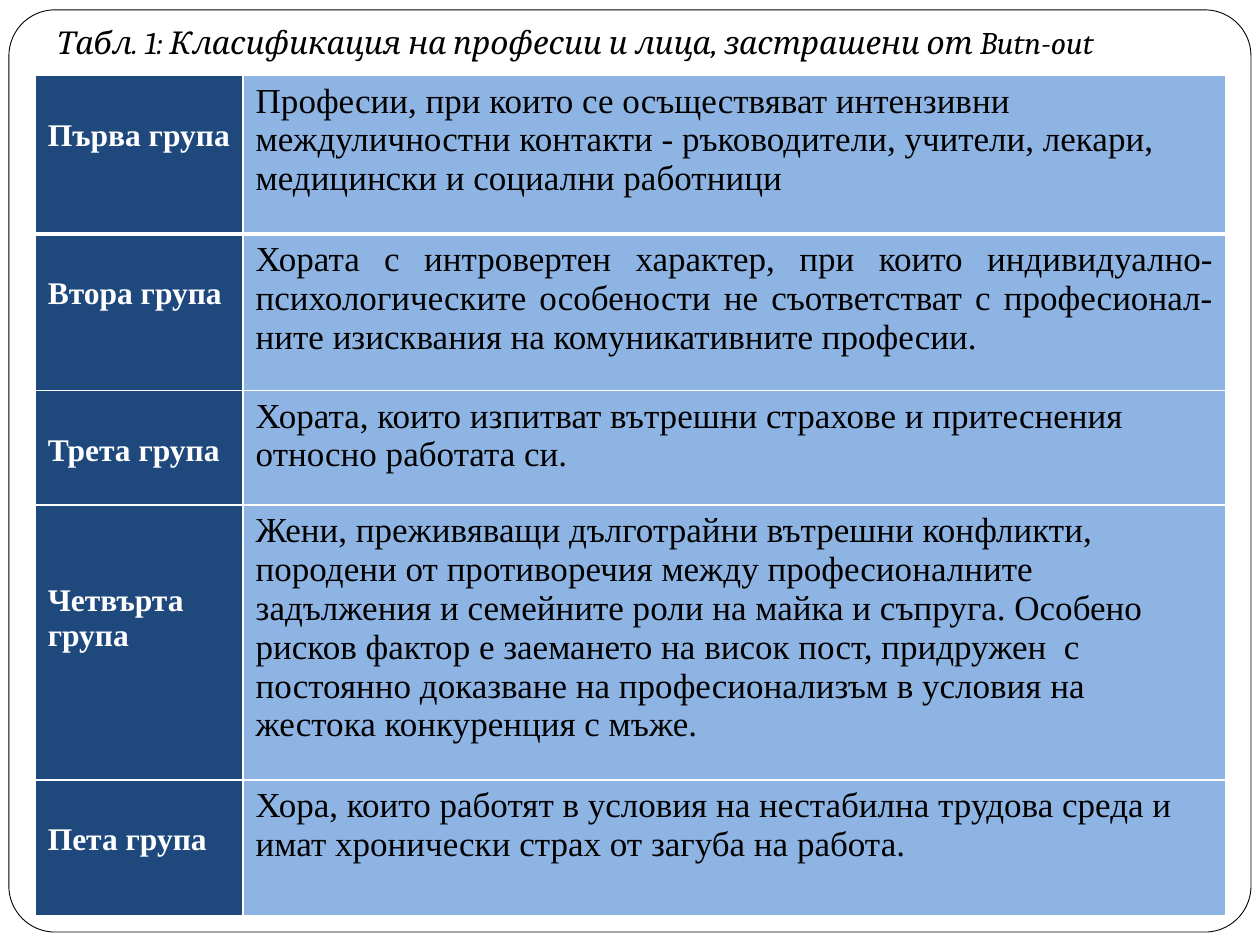
from pptx import Presentation
from pptx.dml.color import RGBColor
from pptx.enum.shapes import MSO_SHAPE
from pptx.enum.text import MSO_ANCHOR, PP_ALIGN
from pptx.oxml import parse_xml
from pptx.oxml.ns import nsdecls
from pptx.util import Cm, Pt

COLORS = {"white": "FFFFFF", "black": "000000", "label": "1F497D", "body": "8EB4E3"}
TITLE = "Табл. 1: Класификация на професии и лица, застрашени от Butn-out"
LEFT, JUSTIFY = PP_ALIGN.LEFT, PP_ALIGN.JUSTIFY
GROUPS = [
    # label, description, alignment, row height, label lines to skip
    ("Първа група", "Професии, при които се осъществяват интензивни междуличностни контакти - "
     "ръководители, учители, лекари, медицински и социални работници", LEFT, 3.2, 1),
    ("Втора група", "Хората с интровертен характер, при които индивидуално-психологическите "
     "особености не съответстват с професионал-ните изисквания на комуникативните професии.",
     JUSTIFY, 3.15, 1),
    ("Трета група", "Хората, които изпитват вътрешни страхове и притеснения относно работата си.",
     LEFT, 2.31, 1),
    ("Четвърта група", "Жени, преживяващи дълготрайни вътрешни конфликти, породени от противоречия "
     "между професионалните задължения и семейните роли на майка и съпруга. Особено рисков фактор "
     "е заемането на висок пост, придружен  с  постоянно доказване на професионализъм в условия "
     "на жестока конкуренция с мъже.", LEFT, 5.54, 2),
    ("Пета група", "Хора, които работят в условия на нестабилна трудова среда и имат хронически "
     "страх от загуба на работа.", LEFT, 2.74, 1),
]
COLUMN_WIDTHS = [4.19, 19.81]
CELL_MARGIN, LABEL_LINE = 0.13, 0.73


def color(name):
    return RGBColor.from_string(COLORS[name])


def set_font(paragraph, name, size, color_name, bold=False, italic=False):
    font = paragraph.font
    font.name, font.size, font.bold, font.italic = name, Pt(size), bold, italic
    font.color.rgb = color(color_name)


def set_borders(cell, bottom_width):
    properties = cell._tc.get_or_add_tcPr()
    for side, width in (("L", 1), ("R", 1), ("T", 1), ("B", bottom_width)):
        properties.append(parse_xml(
            f'<a:ln{side} {nsdecls("a")} w="{Pt(width)}"><a:solidFill>'
            f'<a:srgbClr val="{COLORS["white"]}"/></a:solidFill></a:ln{side}>'))


def fill_cell(cell, text, fill, bottom_width, top_margin, alignment, **font):
    set_borders(cell, bottom_width)
    cell.fill.solid()
    cell.fill.fore_color.rgb = color(fill)
    cell.margin_top = Cm(top_margin)
    cell.text = text
    paragraph = cell.text_frame.paragraphs[0]
    paragraph.alignment = alignment
    set_font(paragraph, "Times New Roman", **font)


def add_frame(slide):
    frame = slide.shapes.add_shape(
        MSO_SHAPE.ROUNDED_RECTANGLE, Cm(0.18), Cm(0.2), Cm(25.04), Cm(18.59))
    frame.adjustments[0] = 0.05
    frame.shadow.inherit = False
    frame.fill.solid()
    frame.fill.fore_color.rgb = color("white")
    frame.line.color.rgb = color("black")
    frame.line.width = Pt(0.5)
    frame.element.getparent().insert(2, frame.element)


def add_title(slide):
    title = slide.shapes.title
    title.left, title.top, title.width, title.height = Cm(0.89), Cm(0.33), Cm(22.81), Cm(1.02)
    title.text = TITLE
    title.text_frame.vertical_anchor = MSO_ANCHOR.TOP
    paragraph = title.text_frame.paragraphs[0]
    paragraph.alignment = LEFT
    set_font(paragraph, "Cambria", 18, "black", italic=True)


def add_groups(slide):
    table = slide.shapes.add_table(
        len(GROUPS), len(COLUMN_WIDTHS), Cm(0.71), Cm(1.52),
        Cm(sum(COLUMN_WIDTHS)), Cm(sum(group[3] for group in GROUPS))).table
    table.horz_banding = False
    for column, width in zip(table.columns, COLUMN_WIDTHS):
        column.width = Cm(width)
    for index, (label, description, alignment, height, skipped) in enumerate(GROUPS):
        table.rows[index].height = Cm(height)
        bottom_width = 3 if index == 0 else 1
        fill_cell(table.cell(index, 0), label, "label", bottom_width,
                  CELL_MARGIN + skipped * LABEL_LINE, LEFT,
                  size=18, color_name="white", bold=True)
        fill_cell(table.cell(index, 1), description, "body", bottom_width,
                  CELL_MARGIN, alignment, size=20, color_name="black")


def main():
    presentation = Presentation()
    presentation.slide_width, presentation.slide_height = Cm(25.4), Cm(19.05)
    slide = presentation.slides.add_slide(presentation.slide_layouts[5])
    add_frame(slide)
    add_groups(slide)
    add_title(slide)
    presentation.save("out.pptx")


if __name__ == "__main__":
    main()
